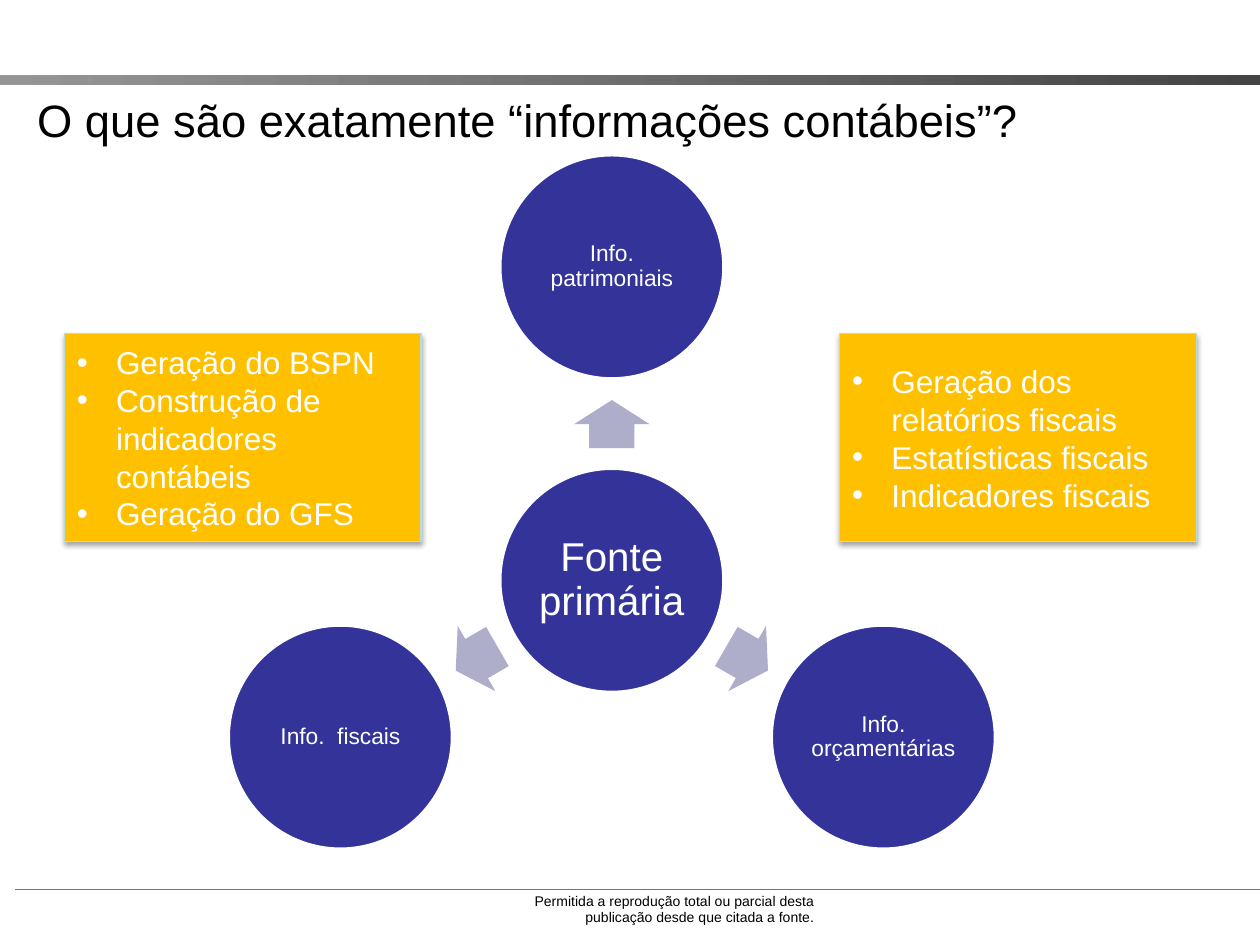
from math import cos, radians, sin

from lxml.etree import SubElement
from pptx import Presentation
from pptx.dml.color import RGBColor
from pptx.enum.shapes import MSO_CONNECTOR, MSO_SHAPE
from pptx.enum.text import MSO_ANCHOR, PP_ALIGN
from pptx.oxml.ns import qn
from pptx.util import Cm, Pt

WHITE = RGBColor(0xFF, 0xFF, 0xFF)
BLACK = RGBColor(0x00, 0x00, 0x00)
INDIGO = RGBColor(0x33, 0x33, 0x99)
LAVENDER = RGBColor(0xAE, 0xAE, 0xCA)
AMBER = RGBColor(0xFF, 0xC0, 0x00)
PALE_TEAL = RGBColor(0xB6, 0xDC, 0xDF)
GREEN = RGBColor(0x33, 0x99, 0x66)
LIGHT_GREY = RGBColor(0x96, 0x96, 0x96)
DARK_GREY = RGBColor(0x44, 0x44, 0x44)


def write_text(shape, lines, size, color=WHITE, align=PP_ALIGN.LEFT,
               anchor=MSO_ANCHOR.MIDDLE, inset=None, spacing=None, bullet_indent=None):
    """Fill a shape with formatted paragraphs."""
    frame = shape.text_frame
    frame.word_wrap = True
    frame.vertical_anchor = anchor
    if inset is not None:
        frame.margin_left = frame.margin_right = Cm(inset)
        frame.margin_top = frame.margin_bottom = Cm(inset)
    for index, line in enumerate(lines):
        paragraph = frame.add_paragraph() if index else frame.paragraphs[0]
        if bullet_indent:
            properties = paragraph._p.get_or_add_pPr()
            properties.set("marL", str(Cm(bullet_indent)))
            properties.set("indent", str(-Cm(bullet_indent)))
            SubElement(properties, qn("a:buFont")).set("typeface", "Arial")
            SubElement(properties, qn("a:buChar")).set("char", "•")
        paragraph.alignment = align
        if spacing:
            paragraph.line_spacing = spacing
        run = paragraph.add_run()
        run.text = line
        run.font.name = "Arial"
        run.font.size = Pt(size)
        run.font.color.rgb = color


def add_filled(slide, kind, left, top, width, height, fill, line=None, line_width=0.75):
    """Add a flat preset shape with an optional outline."""
    shape = slide.shapes.add_shape(kind, Cm(left), Cm(top), Cm(width), Cm(height))
    shape.shadow.inherit = False
    shape.fill.solid()
    shape.fill.fore_color.rgb = fill
    if line is None:
        shape.line.fill.background()
    else:
        shape.line.color.rgb = line
        shape.line.width = Pt(line_width)
    return shape


def add_footer(slide, left, top, width, height):
    """Draw the green rule and the reproduction notice beneath it."""
    rule = slide.shapes.add_connector(
        MSO_CONNECTOR.STRAIGHT, Cm(left), Cm(top), Cm(left + width), Cm(top))
    rule.line.color.rgb = GREEN
    rule.line.width = Pt(0.75)
    SubElement(rule._element.spPr, qn("a:effectLst"))
    notice = slide.shapes.add_textbox(Cm(left + 10.22), Cm(top - 0.07), Cm(6.15), Cm(height))
    write_text(notice, ["Permitida a reprodução total ou parcial desta publicação "
                        "desde que citada a fonte."],
               size=8, color=BLACK, align=PP_ALIGN.RIGHT, anchor=MSO_ANCHOR.TOP)


def add_header(slide, left, top, width, height):
    """Draw the grey gradient band and the slide title below it."""
    band = add_filled(slide, MSO_SHAPE.RECTANGLE, left, top, width, 0.2, LIGHT_GREY)
    band.fill.gradient()
    band.fill.gradient_angle = 0
    for stop, color, position in zip(
            band.fill.gradient_stops, (LIGHT_GREY, DARK_GREY), (0, 1)):
        stop.color.rgb = color
        stop.position = position
    title = slide.shapes.add_textbox(
        Cm(left + 0.5), Cm(top + 0.18), Cm(width - 1.78), Cm(height - 0.18))
    write_text(title, ["O que são exatamente “informações contábeis”?"],
               size=25.9, color=BLACK)


def add_circle(slide, center_x, center_y, diameter, label, size):
    """Draw one labelled circle around its centre."""
    circle = add_filled(slide, MSO_SHAPE.OVAL, center_x - diameter / 2,
                        center_y - diameter / 2, diameter, diameter, INDIGO, WHITE, 2)
    write_text(circle, [label], size=size, align=PP_ALIGN.CENTER, inset=0.06, spacing=0.9)


def add_radial_diagram(slide, left, top, width, height):
    """Draw the primary source with arrows out to three kinds of information."""
    diameter = 4.52
    orbit = (height - diameter) / 1.5
    hub_x = left + width / 2
    hub_y = top + diameter / 2 + orbit
    arrow_length, arrow_width, arrow_orbit = 0.97, 1.52, 3.15
    add_circle(slide, hub_x, hub_y, diameter, "Fonte primária", 23)
    branches = {270: "Info. patrimoniais", 30: "Info. orçamentárias", 150: "Info.  fiscais"}
    for angle, label in branches.items():
        toward_x, toward_y = cos(radians(angle)), sin(radians(angle))
        arrow = add_filled(slide, MSO_SHAPE.RIGHT_ARROW,
                           hub_x + arrow_orbit * toward_x - arrow_length / 2,
                           hub_y + arrow_orbit * toward_y - arrow_width / 2,
                           arrow_length, arrow_width, LAVENDER)
        arrow.adjustments[0] = 0.6
        arrow.adjustments[1] = 0.5
        arrow.rotation = angle
        add_circle(slide, hub_x + orbit * toward_x, hub_y + orbit * toward_y,
                   diameter, label, 13)


def add_uses_panel(slide, left, top, width, height, uses):
    """Draw an amber panel with a soft shadow and a bulleted list."""
    panel = add_filled(slide, MSO_SHAPE.RECTANGLE, left, top, width, height, AMBER, PALE_TEAL)
    effects = panel._element.spPr.find(qn("a:effectLst"))
    shadow = SubElement(effects, qn("a:outerShdw"), blurRad=str(Pt(3.1)),
                        dist=str(Pt(1.8)), dir="5400000", rotWithShape="0")
    shade = SubElement(shadow, qn("a:srgbClr"), val=str(BLACK))
    SubElement(shade, qn("a:alpha"), val="35000")
    write_text(panel, uses, size=18, bullet_indent=0.79)


def main():
    """Build the slide and save it."""
    presentation = Presentation()
    presentation.slide_width = Cm(25.4)
    presentation.slide_height = Cm(19.05)
    slide = presentation.slides.add_slide(presentation.slide_layouts[6])
    add_footer(slide, 0.3, 17.93, 25.1, 0.94)
    add_header(slide, 0, 1.52, 25.4, 1.6)
    add_radial_diagram(slide, 4.6, 3.12, 15.47, 14)
    add_uses_panel(slide, 1.3, 6.73, 7.19, 4.19, [
        "Geração do BSPN", "Construção de indicadores contábeis", "Geração do GFS"])
    add_uses_panel(slide, 16.93, 6.73, 7.19, 4.19, [
        "Geração dos relatórios fiscais", "Estatísticas fiscais", "Indicadores fiscais"])
    presentation.save("out.pptx")


if __name__ == "__main__":
    main()
